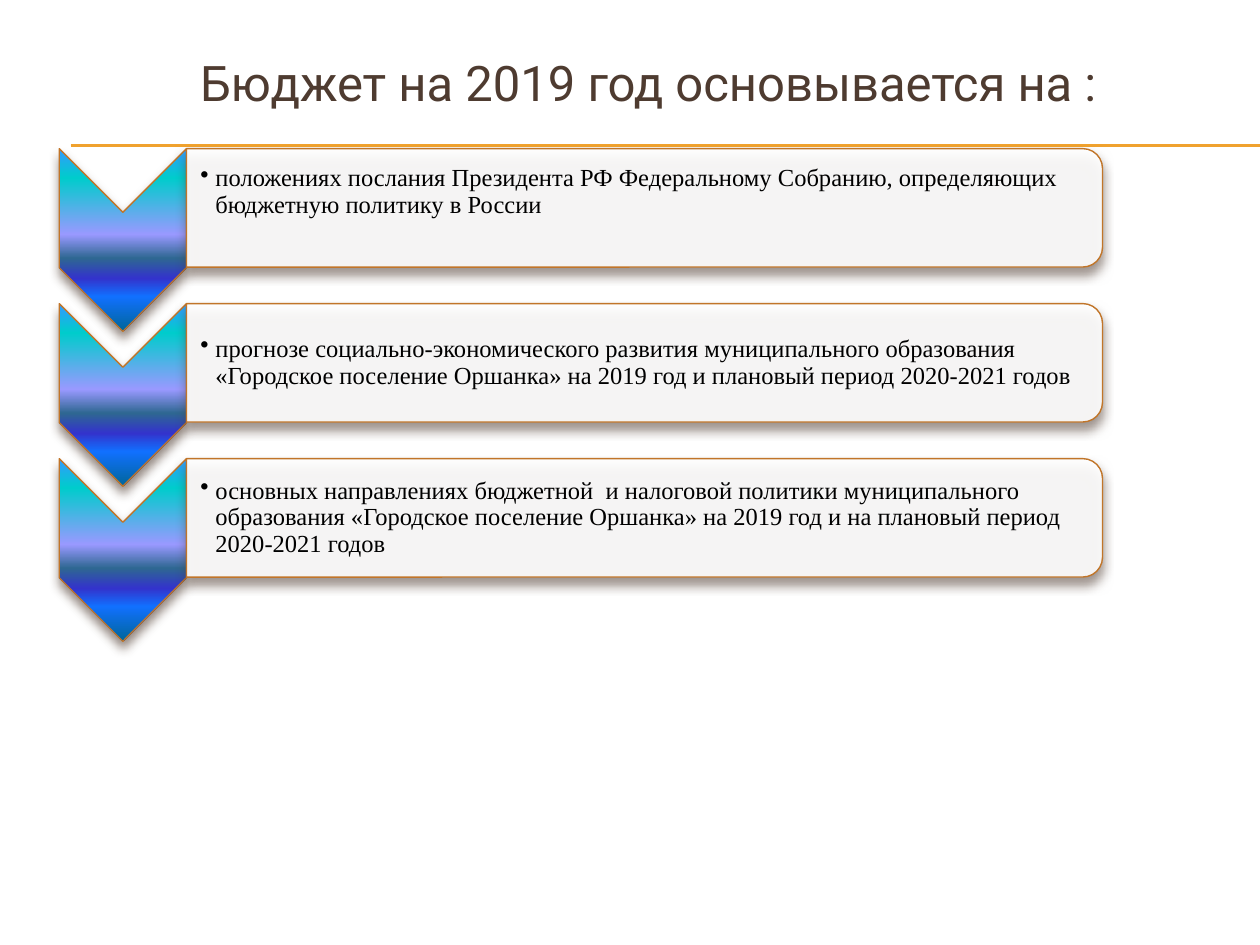
from lxml.etree import SubElement
from pptx import Presentation
from pptx.dml.color import RGBColor
from pptx.enum.shapes import MSO_CONNECTOR, MSO_SHAPE
from pptx.enum.text import MSO_ANCHOR, PP_ALIGN
from pptx.oxml import parse_xml
from pptx.oxml.ns import nsdecls, qn
from pptx.util import Inches, Pt

BROWN = RGBColor(0x4E, 0x3B, 0x30)
GOLD = RGBColor(0xF0, 0xA2, 0x2E)
COPPER = RGBColor(0xC1, 0x75, 0x29)
WHITE = RGBColor(0xFF, 0xFF, 0xFF)
BLACK = RGBColor(0, 0, 0)
CHEVRON_STOPS = [
    (0, RGBColor(0x33, 0x99, 0xFF)),
    (16, RGBColor(0x00, 0xCC, 0xCC)),
    (47, RGBColor(0x99, 0x99, 0xFF)),
    (60, RGBColor(0x2E, 0x67, 0x92)),
    (71, RGBColor(0x33, 0x33, 0xCC)),
    (81, RGBColor(0x11, 0x70, 0xFF)),
    (100, RGBColor(0x00, 0x66, 0x99)),
]

# Grid of the list, in inches
LEFT, TOP, ROW_STEP = 0.47, 1.18, 1.23
CHEVRON_WIDTH, CHEVRON_HEIGHT = 1.01, 1.45
PANEL_LEFT, PANEL_WIDTH, PANEL_HEIGHT = 1.48, 7.27, 0.94
TEXT_WIDTH, TEXT_HEIGHT = 7.22, 0.85

# Text and bottom inset of each row; the first text sits above the middle
ROWS = [
    ("положениях послания Президента РФ Федеральному Собранию, определяющих "
     "бюджетную политику в России", 0.26),
    ("прогнозе социально-экономического развития муниципального образования "
     "«Городское поселение Оршанка» на 2019 год и плановый период "
     "2020-2021 годов", 0.01),
    ("основных направлениях бюджетной  и налоговой политики муниципального "
     "образования «Городское поселение Оршанка» на 2019 год и на плановый период "
     "2020-2021 годов", 0.01),
]


def add_turned_shape(kind, left, top, width, height):
    """Add a shape turned by 90° that covers the given area once turned."""
    shape = slide.shapes.add_shape(
        kind, Inches(left + (width - height) / 2), Inches(top + (height - width) / 2),
        Inches(height), Inches(width))
    shape.rotation = 90
    shape.fill.solid()
    shape.fill.fore_color.rgb = WHITE
    shape.line.color.rgb = COPPER
    shape.line.width = Pt(0.79)
    shape.shadow.inherit = False
    shape._element.spPr.find(qn("a:effectLst")).append(parse_xml(
        f'<a:outerShdw {nsdecls("a")} blurRad="{Pt(6)}" dist="{Pt(4)}" dir="5400000" '
        f'rotWithShape="0"><a:srgbClr val="{BROWN}"><a:alpha val="60000"/></a:srgbClr>'
        '</a:outerShdw>'))
    return shape


deck = Presentation()
deck.slide_width, deck.slide_height = Inches(10), Inches(7.5)
slide = deck.slides.add_slide(deck.slide_layouts[5])

for y in (1.15, 1.16):
    rule = slide.shapes.add_connector(
        MSO_CONNECTOR.STRAIGHT, Inches(0.56), Inches(y), deck.slide_width, Inches(y))
    rule.line.color.rgb = GOLD
    rule.line.width = Pt(0.75)
    SubElement(rule._element.spPr, qn("a:effectLst"))

title = slide.shapes.title
title.left, title.top = Inches(1.17), Inches(0.16)
title.width, title.height = Inches(7.95), Inches(0.98)
title.text_frame.vertical_anchor = MSO_ANCHOR.MIDDLE
para = title.text_frame.paragraphs[0]
para.alignment = PP_ALIGN.CENTER
span = para.add_run()
span.text = "Бюджет на 2019 год основывается на :"
span.font.size = Pt(28)
span.font.name = "Roboto"
span.font.color.rgb = BROWN

stops = "".join(f'<a:gs pos="{share * 1000}"><a:srgbClr val="{color}"/></a:gs>'
                for share, color in CHEVRON_STOPS)

for row, (text, bottom_inset) in enumerate(ROWS):
    top = TOP + row * ROW_STEP

    chevron = add_turned_shape(MSO_SHAPE.CHEVRON, LEFT, top, CHEVRON_WIDTH, CHEVRON_HEIGHT)
    properties = chevron._element.spPr
    properties.replace(properties.find(qn("a:solidFill")), parse_xml(
        f'<a:gradFill {nsdecls("a")} rotWithShape="0"><a:gsLst>{stops}</a:gsLst>'
        '<a:lin ang="5400000" scaled="0"/></a:gradFill>'))

    panel = add_turned_shape(
        MSO_SHAPE.ROUND_2_SAME_RECTANGLE, PANEL_LEFT, top, PANEL_WIDTH, PANEL_HEIGHT)
    panel_color = panel._element.spPr.find(qn("a:solidFill"))[0]
    SubElement(panel_color, qn("a:alpha"), val="90000")

    box = slide.shapes.add_textbox(
        Inches(PANEL_LEFT), Inches(top + (PANEL_HEIGHT - TEXT_HEIGHT) / 2),
        Inches(TEXT_WIDTH), Inches(TEXT_HEIGHT))
    frame = box.text_frame
    frame.word_wrap = True
    frame.vertical_anchor = MSO_ANCHOR.MIDDLE
    frame.margin_left = Inches(0.11)
    frame.margin_top = frame.margin_right = Inches(0.01)
    frame.margin_bottom = Inches(bottom_inset)
    para = frame.paragraphs[0]
    para.line_spacing = 0.9
    bullet_format = para._p.get_or_add_pPr()
    bullet_format.set("marL", str(Inches(0.12)))
    bullet_format.set("indent", str(-Inches(0.12)))
    SubElement(bullet_format, qn("a:buChar"), char="•")
    span = para.add_run()
    span.text = text
    span.font.size = Pt(14)
    span.font.name = "Times New Roman"
    span.font.color.rgb = BLACK

deck.save("out.pptx")
